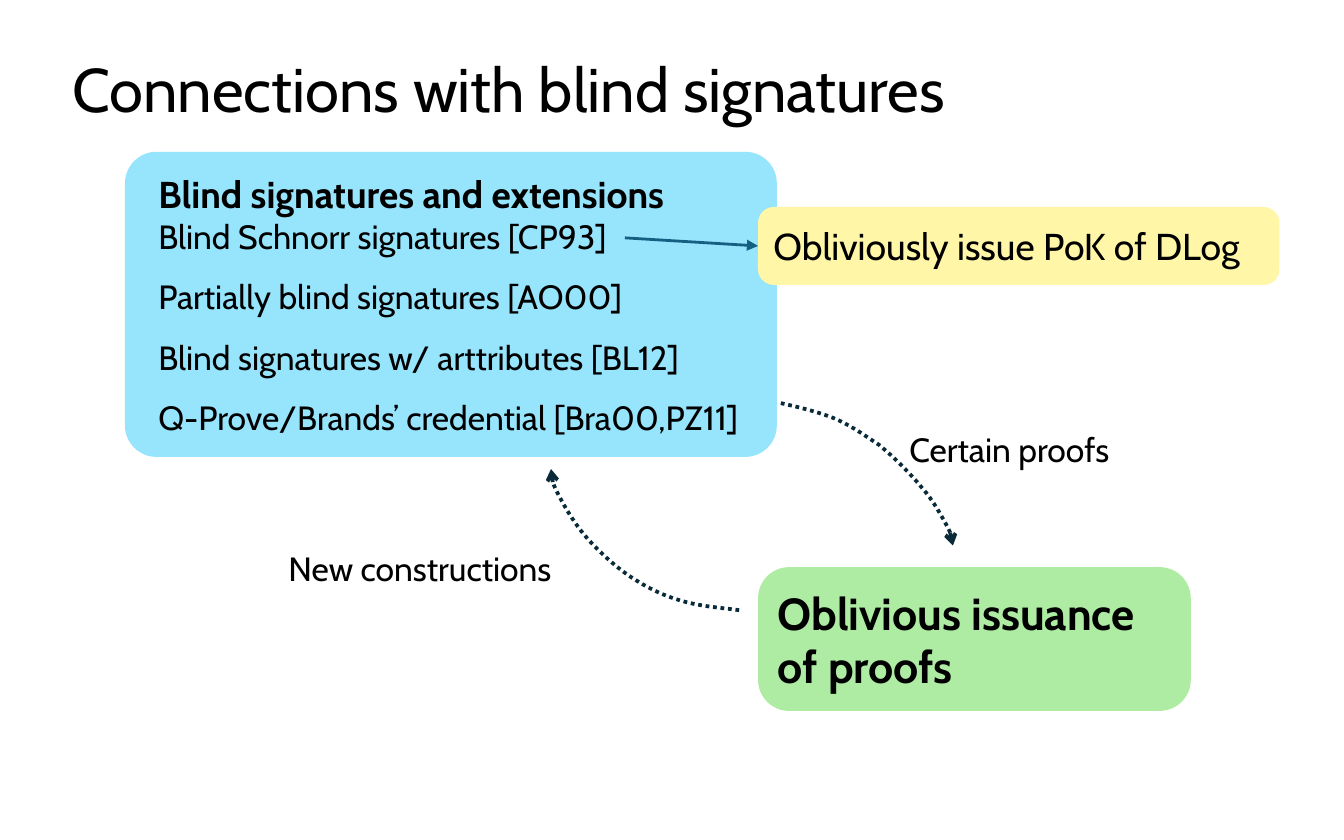
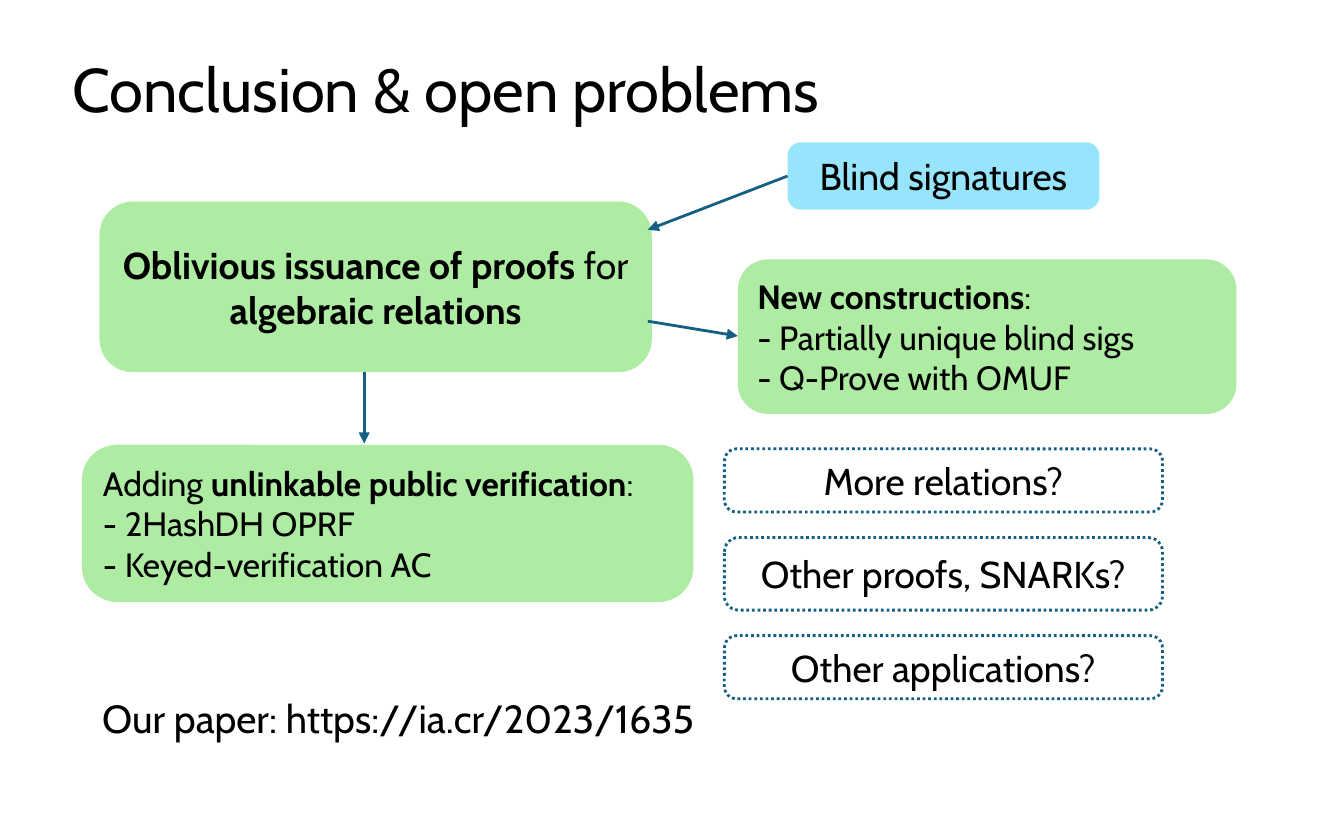
import dataclasses
import typing

import lxml.etree
import pptx
import pptx.dml.color
import pptx.enum.dml
import pptx.enum.shapes
import pptx.enum.text
import pptx.oxml.ns
import pptx.util

PX = 9144
CENTER = pptx.enum.text.PP_ALIGN.CENTER
LEFT = pptx.enum.text.PP_ALIGN.LEFT
MIDDLE = pptx.enum.text.MSO_ANCHOR.MIDDLE
TOP = pptx.enum.text.MSO_ANCHOR.TOP
DOTTED = pptx.enum.dml.MSO_LINE.ROUND_DOT


@dataclasses.dataclass(frozen=True)
class Theme:
    """Colours and type sizes of the deck."""
    font: str = "Cabin"
    text: str = "000000"
    blue: str = "97E4FD"
    green: str = "AFECA3"
    yellow: str = "FFF7A7"
    white: str = "FFFFFF"
    accent: str = "156082"
    dark: str = "092A39"
    title: int = 33
    strong: int = 24
    paper: int = 21
    lead: int = 20
    body: int = 18


THEME = Theme()


class Rect(typing.NamedTuple):
    """Left, top, width and height in px."""
    x: int
    y: int
    w: int
    h: int


class Run(typing.NamedTuple):
    """Text of one weight."""
    text: str
    bold: bool = False


@dataclasses.dataclass(frozen=True)
class Para:
    """Paragraph with its runs and spacing."""
    runs: tuple[Run, ...]
    size: int = THEME.body
    spacing: float = 1.0
    before: float = 0
    align: typing.Any = LEFT


@dataclasses.dataclass(frozen=True)
class Box:
    """Rounded box with text; no fill means a plain label."""
    rect: Rect
    paras: tuple[Para, ...]
    fill: str | None = None
    adj: float = 0.195
    inset: int = 8
    dotted: bool = False


class Arrow(typing.NamedTuple):
    """Straight arrow between two points in px."""
    x1: int
    y1: int
    x2: int
    y2: int


Point = tuple[float, float]
TITLE = Rect(46, 33, 895, 72)


def line_of(text: str, size: int = THEME.body, bold: bool = False, **fmt: typing.Any) -> Para:
    """Return a paragraph of a single run."""
    return Para((Run(text, bold),), size, **fmt)


def rgb(value: str) -> pptx.dml.color.RGBColor:
    """Return the colour object of a hex value."""
    return pptx.dml.color.RGBColor.from_string(value)


def apply(obj: typing.Any, values: dict[str, typing.Any]) -> None:
    """Set each named attribute on the object."""
    for name, value in values.items():
        setattr(obj, name, value)


def write(tf: typing.Any, paras: tuple[Para, ...], inset: int = 8, anchor: typing.Any = MIDDLE) -> None:
    """Fill a text frame with formatted paragraphs."""
    apply(tf, {
        "word_wrap": True, "vertical_anchor": anchor,
        "margin_left": inset * PX, "margin_right": 8 * PX,
        "margin_top": 4 * PX, "margin_bottom": 4 * PX,
    })
    for i, para in enumerate(paras):
        p = tf.add_paragraph() if i else tf.paragraphs[0]
        apply(p, {
            "alignment": para.align, "line_spacing": para.spacing,
            "space_before": pptx.util.Pt(para.before),
        })
        for run in para.runs:
            r = p.add_run()
            r.text = run.text
            apply(r.font, {"name": THEME.font, "size": pptx.util.Pt(para.size), "bold": run.bold})
            r.font.color.rgb = rgb(THEME.text)


def stroke(line: typing.Any, color: str, width: float, head: str | None = None, dotted: bool = False) -> None:
    """Format an outline and give it an arrowhead if asked."""
    line.color.rgb = rgb(color)
    line.width = pptx.util.Pt(width)
    if dotted:
        line.dash_style = DOTTED
    if head:
        ln = line.color._xFill.getparent()
        lxml.etree.SubElement(ln, pptx.oxml.ns.qn("a:tailEnd"), type=head)


def add_slide(prs: typing.Any, title: str) -> typing.Any:
    """Add a slide with the shared title style."""
    s = prs.slides.add_slide(prs.slide_layouts[5])
    sp = s.shapes.title
    apply(sp, dict(zip(("left", "top", "width", "height"), (v * PX for v in TITLE))))
    write(sp.text_frame, (line_of(title, THEME.title, spacing=0.9),))
    return s


def add_box(s: typing.Any, box: Box) -> None:
    """Draw a rounded box or label."""
    kind = pptx.enum.shapes.MSO_SHAPE.ROUNDED_RECTANGLE
    sp = s.shapes.add_shape(kind, *(v * PX for v in box.rect))
    sp.shadow.inherit = False
    sp.adjustments[0] = box.adj
    if box.fill:
        sp.fill.solid()
        sp.fill.fore_color.rgb = rgb(box.fill)
    else:
        sp.fill.background()
    if box.dotted:
        stroke(sp.line, THEME.accent, 1.5, dotted=True)
    else:
        sp.line.fill.background()
    write(sp.text_frame, box.paras, box.inset)


def add_arrow(s: typing.Any, arrow: Arrow) -> None:
    """Draw a straight arrow."""
    kind = pptx.enum.shapes.MSO_CONNECTOR.STRAIGHT
    sp = s.shapes.add_connector(kind, *(v * PX for v in arrow))
    stroke(sp.line, THEME.accent, 1.5, "triangle")
    lxml.etree.SubElement(sp._element.spPr, pptx.oxml.ns.qn("a:effectLst"))


def bezier(a: Point, b: Point, c: Point, d: Point, t: float) -> Point:
    """Return the point at t on a cubic curve."""
    u = 1 - t
    weights = (u ** 3, 3 * u * u * t, 3 * u * t * t, t ** 3)
    x, y = (sum(w * q[i] for w, q in zip(weights, (a, b, c, d))) for i in (0, 1))
    return x, y


def add_curve(s: typing.Any, knots: tuple[Point, ...], steps: int = 8) -> None:
    """Draw a dotted curved arrow through chained cubic curves."""
    pts = [
        bezier(*knots[i:i + 4], n / steps)
        for i in range(0, len(knots) - 1, 3) for n in range(1, steps + 1)
    ]
    start, *rest = [(round(x * PX), round(y * PX)) for x, y in (knots[0], *pts)]
    builder = s.shapes.build_freeform(*start, scale=1.0)
    builder.add_line_segments(rest, close=False)
    sp = builder.convert_to_shape()
    sp.shadow.inherit = False
    sp.fill.background()
    stroke(sp.line, THEME.dark, 2, "arrow", dotted=True)


def connections(prs: typing.Any) -> None:
    """Build the slide on blind signatures."""
    s = add_slide(prs, "Connections with blind signatures")
    schemes = (
        "Partially blind signatures [AO00]",
        "Blind signatures w/ arttributes [BL12]",
        "Q-Prove/Brands’ credential [Bra00,PZ11]",
    )
    blind = (
        line_of("Blind signatures and extensions", THEME.lead, True),
        line_of("Blind Schnorr signatures [CP93]"),
        *(line_of(text, spacing=1.5) for text in schemes),
    )
    issuance = (line_of("Oblivious issuance of proofs", THEME.strong, True),)
    for box in (
        Box(Rect(93, 113, 485, 227), blind, THEME.blue, 0.103, 18),
        Box(Rect(564, 422, 322, 107), issuance, THEME.green, 0.216),
        Box(Rect(665, 305, 210, 58), (line_of("Certain proofs"),), adj=0.216),
        Box(Rect(204, 402, 238, 41), (line_of("New constructions"),), adj=0.216),
        Box(Rect(564, 154, 388, 58), (line_of("Obliviously issue PoK of DLog", THEME.lead),),
            THEME.yellow, 0.202),
    ):
        add_box(s, box)
    to_issuance = ((581, 300), (594, 303), (607, 306), (620, 311), (632, 316),
                   (642, 323), (654, 331), (665, 340), (678, 353), (686, 363),
                   (695, 373), (701, 385), (705, 392), (709, 400), (709, 403), (709, 406))
    to_blind = ((550, 454), (535, 452), (520, 451), (507, 447), (493, 443),
                (481, 437), (469, 429), (457, 421), (443, 408), (434, 397),
                (425, 386), (418, 373), (414, 365), (410, 357), (410, 353), (410, 349))
    for knots in (to_issuance, to_blind):
        add_curve(s, knots)
    add_arrow(s, Arrow(465, 177, 564, 183))


def conclusion(prs: typing.Any) -> None:
    """Build the closing slide."""
    s = add_slide(prs, "Conclusion & open problems")
    issuance = Para((
        Run("Oblivious issuance of proofs ", True), Run("for"), Run(" algebraic relations", True),
    ), THEME.lead, align=CENTER)
    verification = (
        Para((Run("Adding "), Run("unlinkable public verification", True), Run(":"))),
        line_of("- 2HashDH OPRF"),
        line_of("- Keyed-verification AC"),
    )
    constructions = (
        Para((Run("New constructions", True), Run(":"))),
        line_of("- Partially unique blind sigs"),
        line_of("- Q-Prove with OMUF"),
    )
    blind = line_of("Blind signatures", THEME.lead, align=CENTER)
    for box in (
        Box(Rect(74, 150, 411, 127), (issuance,), THEME.green),
        Box(Rect(586, 106, 232, 50), (blind,), THEME.blue),
        Box(Rect(61, 331, 455, 117), verification, THEME.green, 0.223),
        Box(Rect(549, 193, 371, 115), constructions, THEME.green),
    ):
        add_box(s, box)
    for text, y, h in (
        ("More relations?", 334, 47),
        ("Other proofs, SNARKs?", 400, 54),
        ("Other applications?", 473, 47),
    ):
        question = line_of(text, THEME.lead, align=CENTER)
        add_box(s, Box(Rect(539, y, 326, h), (question,), THEME.white, dotted=True))
    for arrow in (
        Arrow(271, 277, 271, 330),
        Arrow(482, 239, 549, 250),
        Arrow(586, 131, 482, 171),
    ):
        add_arrow(s, arrow)
    sp = s.shapes.add_textbox(*(v * PX for v in Rect(68, 519, 461, 39)))
    paper = line_of("Our paper: https://ia.cr/2023/1635", THEME.paper, spacing=0.8, before=7.5)
    write(sp.text_frame, (paper,), anchor=TOP)


def main() -> None:
    """Build and save the deck."""
    prs = pptx.Presentation()
    apply(prs, {"slide_width": 1000 * PX, "slide_height": 625 * PX})
    connections(prs)
    conclusion(prs)
    prs.save("out.pptx")


if __name__ == "__main__":
    main()
